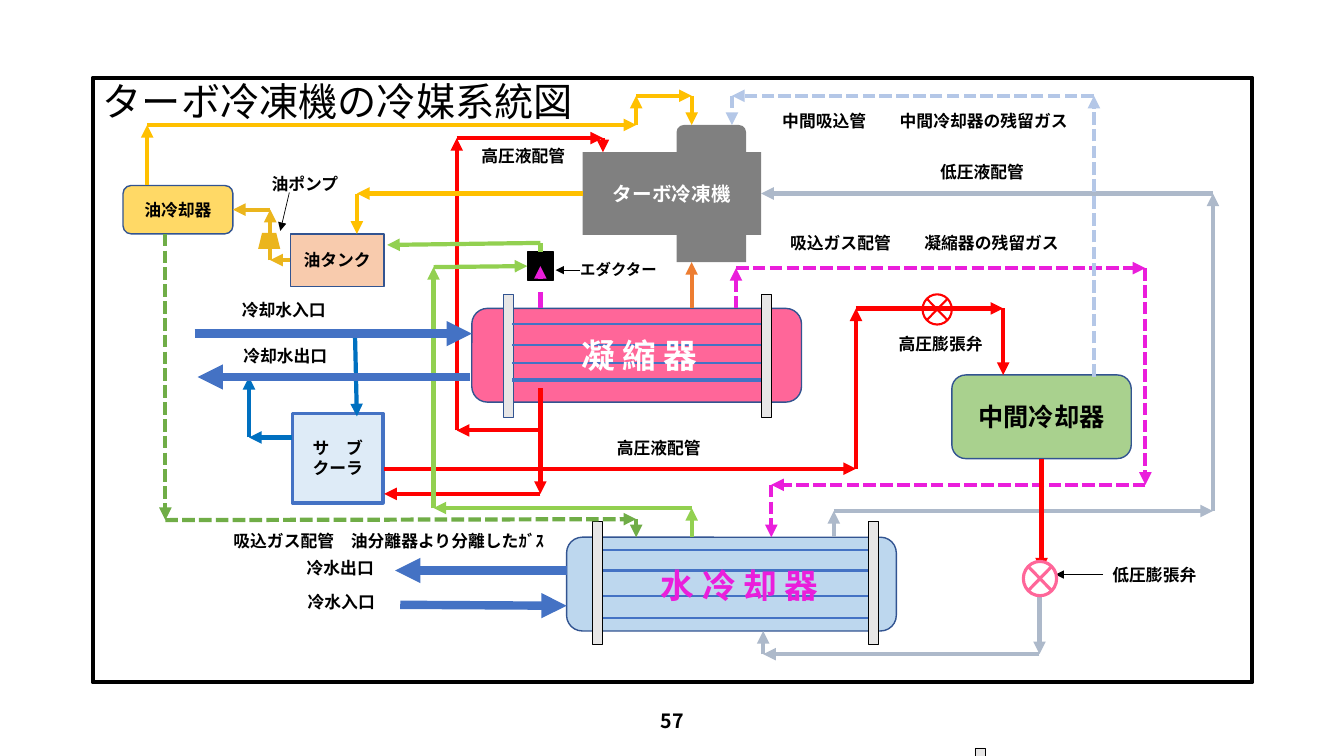
"""Build the refrigerant flow diagram of a turbo chiller on one slide."""
from itertools import pairwise

from lxml import etree
from pptx import Presentation
from pptx.dml.color import RGBColor
from pptx.enum.dml import MSO_LINE
from pptx.enum.shapes import MSO_CONNECTOR, MSO_SHAPE as SHAPE
from pptx.enum.text import MSO_ANCHOR, MSO_AUTO_SIZE, PP_ALIGN
from pptx.oxml.ns import qn
from pptx.util import Inches, Pt


class Theme:
    font = "Noto Sans CJK JP"
    title, vessel, cooler, body, small = 28, 24, 18, 12, 11
    machine = page = 14
    black, white, grey, plate = "000000", "FFFFFF", "808080", "E7E6E6"
    edge, blue, water, pale_blue = "325491", "4472C4", "0070C0", "DEEBF7"
    pink, sky, yellow, peach, sage = "FF6699", "BDD7EE", "FFD966", "F8CBAD", "A9D18E"
    red, magenta, orange, steel, mist = "FF0000", "EA1EDB", "ED7D31", "ADB9CA", "B4C7E7"
    amber, gold, lime, green = "FFC000", "EBB51D", "92D050", "70AD47"


T = Theme


def write(sp, text, size, color=T.black, bold=True):
    tf = sp.text_frame
    tf.text = text
    tf.word_wrap = True
    tf.vertical_anchor = MSO_ANCHOR.MIDDLE
    tf.margin_left = tf.margin_right = 0
    for p in tf.paragraphs:
        p.alignment = PP_ALIGN.CENTER
        for r in p.runs:
            r.font.size, r.font.bold, r.font.name = Pt(size), bold, T.font
            r.font.color.rgb = RGBColor.from_string(color)
            etree.SubElement(r.font._element, qn("a:ea"), typeface=T.font)


def add_box(preset, box, fill=None, line=None, width=1):
    sp = slide.shapes.add_shape(preset, *map(Inches, box))
    sp.shadow.inherit = False
    if fill:
        sp.fill.solid()
        sp.fill.fore_color.rgb = RGBColor.from_string(fill)
    else:
        sp.fill.background()
    if line:
        sp.line.color.rgb = RGBColor.from_string(line)
        sp.line.width = Pt(width)
    else:
        sp.line.fill.background()
    return sp


prs = Presentation()
prs.slide_width, prs.slide_height = Inches(13.33), Inches(7.5)
slide = prs.slides.add_slide(prs.slide_layouts[5])

title = slide.shapes.title
title.left, title.top, title.width, title.height = map(Inches, (0.92, 0.77, 11.5, 6))
title.line.color.rgb = RGBColor.from_string(T.black)
title.line.width = Pt(3)
write(title, "ターボ冷凍機の冷媒系統図", T.title, bold=False)
tf = title.text_frame
tf.auto_size = MSO_AUTO_SIZE.NONE
tf.vertical_anchor = MSO_ANCHOR.TOP
tf.margin_left = Inches(0.1)
tf.paragraphs[0].alignment = PP_ALIGN.LEFT
tf.paragraphs[0].line_spacing = 0.9

machines = [
    (SHAPE.RECTANGLE, (5.78, 1.51, 1.77, 0.82), T.grey, None, 0, "ターボ冷凍機", T.machine, T.white),
    (SHAPE.ROUNDED_RECTANGLE, (6.71, 1.24, 0.69, 0.43), T.grey, None, 0, "", 0, T.black),
    (SHAPE.RECTANGLE, (6.71, 2.21, 0.69, 0.39), T.grey, None, 0, "", 0, T.black),
    (SHAPE.ROUNDED_RECTANGLE, (4.68, 3.06, 3.27, 0.93), T.pink, T.edge, 1, "", 0, T.black),
    (SHAPE.ROUNDED_RECTANGLE, (5.62, 5.33, 3.27, 0.93), T.sky, T.edge, 1, "", 0, T.black),
    (SHAPE.ROUNDED_RECTANGLE, (1.22, 1.84, 1.09, 0.48), T.yellow, T.edge, 1, "油冷却器", T.body, T.black),
    (SHAPE.RECTANGLE, (2.88, 2.32, 0.93, 0.52), T.peach, T.edge, 1, "油タンク", T.body, T.black),
    (SHAPE.ROUNDED_RECTANGLE, (9.44, 3.72, 1.78, 0.83), T.sage, T.edge, 1, "中間冷却器", T.cooler, T.black),
    (SHAPE.RECTANGLE, (2.9, 4.1, 0.9, 0.89), T.pale_blue, T.blue, 2.25, "サ　ブ\nクーラ", T.body, T.black),
    (SHAPE.RECTANGLE, (5.23, 2.5, 0.26, 0.28), T.black, T.black, 1, "", 0, T.black),
]
ports = {}
for preset, box, fill, line, width, text, size, color in machines:
    sp = add_box(preset, box, fill, line, width)
    if text:
        write(sp, text, size, color)
    x, y, w, h = box
    sides = [(x + w / 2, y), (x, y + h / 2), (x + w / 2, y + h), (x + w, y + h / 2)]
    for site, (px, py) in enumerate(sides):
        ports[round(px, 2), round(py, 2)] = sp, site

plates = [(4.99, 2.92, T.edge), (7.55, 2.92, T.black), (8.61, 5.17, T.black),
          (5.88, 5.17, T.black), (9.67, 7.42, T.black)]
for x, y, line in plates:
    add_box(SHAPE.RECTANGLE, (x, y, 0.1, 1.22), T.plate, line, 0.5)

tubes = [(T.blue, 2.25 if y == 3.77 else 1.5, None, False, [(x1, y), (x2, y)])
         for x1, x2, rows in [(5.08, 7.55, (3.21, 3.42, 3.6, 3.77)),
                              (5.98, 8.61, (5.46, 5.66, 5.91, 6.13))]
         for y in rows]
DASH, LONG = MSO_LINE.SQUARE_DOT, MSO_LINE.DASH
pipes = [
    (T.steel, 3, None, True, [(8.27, 5.33), (8.27, 5.07), (12.03, 5.07), (12.03, 1.92), (7.55, 1.92)]),
    (T.orange, 3, None, True, [(6.86, 3.06), (6.86, 2.6)]),
    (T.magenta, 3, DASH, True, [(7.3, 3.06), (7.3, 2.66), (11.36, 2.66), (11.36, 4.81),
                                (7.65, 4.81), (7.65, 5.33)]),
    (T.mist, 3, DASH, True, [(10.85, 3.74), (10.85, 0.95), (7.26, 0.95), (7.26, 1.24)]),
    (T.red, 3, None, True, [(10.33, 4.55), (10.33, 5.66)]),
    (T.steel, 3, None, True, [(10.31, 5.91), (10.31, 6.49), (7.57, 6.49), (7.57, 6.26)]),
    (T.red, 3, None, True, [(5.36, 3.85), (5.36, 4.9), (3.81, 4.9)]),
    (T.red, 3, None, True, [(3.81, 4.65), (8.49, 4.65), (8.49, 3.06), (9.95, 3.06), (9.95, 3.72)]),
    (T.red, 3, None, True, [(5.36, 4.27), (4.53, 4.27), (4.53, 1.37), (5.98, 1.37), (5.98, 1.51)]),
    (T.amber, 3, None, True, [(5.78, 1.92), (3.54, 1.92), (3.54, 2.32)]),
    (T.gold, 3, None, True, [(2.88, 2.58), (2.68, 2.58), (2.68, 2.08), (2.31, 2.08)]),
    (T.amber, 3, None, True, [(1.46, 1.84), (1.46, 1.24), (6.31, 1.24), (6.31, 0.95),
                              (6.86, 0.95), (6.86, 1.24)]),
    (T.lime, 3, None, False, [(5.36, 2.5), (5.36, 2.41)]),
    (T.lime, 3, None, True, [(5.36, 2.41), (3.84, 2.43)]),
    (T.magenta, 3, LONG, True, [(5.36, 3.06), (5.36, 2.64)]),
    (T.lime, 3, None, True, [(6.86, 5.33), (6.86, 5.04), (4.3, 5.04), (4.3, 2.65), (5.23, 2.64)]),
    (T.water, 3, None, True, [(3.52, 3.27), (3.54, 4.13)]),
    (T.water, 3, None, True, [(2.9, 4.34), (2.47, 4.34), (2.47, 3.74)]),
    (T.green, 3, DASH, True, [(1.64, 2.32), (1.64, 5.16), (6.31, 5.15)]),
    (T.green, 3, None, True, [(6.31, 5.15), (6.31, 5.33)]),
    (T.blue, 6, None, True, [(3.97, 6), (5.62, 6.01)]),
    (T.blue, 6, None, True, [(5.62, 5.66), (3.92, 5.66)]),
    (T.blue, 6, None, True, [(1.93, 3.31), (4.68, 3.31)]),
    (T.blue, 6, None, True, [(4.66, 3.74), (1.96, 3.74)]),
    (T.black, 0.5, None, True, [(2.87, 1.91), (2.78, 2.29)]),
    (T.black, 0.5, None, True, [(5.75, 2.68), (5.51, 2.68)]),
    (T.black, 0.5, None, True, [(10.94, 5.7), (10.47, 5.7)]),
]
for color, width, dash, arrow, points in tubes + pipes:
    for start, end in pairwise(points):
        pipe = slide.shapes.add_connector(MSO_CONNECTOR.STRAIGHT, *map(Inches, start + end))
        pipe.line.color.rgb = RGBColor.from_string(color)
        pipe.line.width = Pt(width)
        if dash:
            pipe.line.dash_style = dash
        if arrow:
            etree.SubElement(pipe.line._get_or_add_ln(), qn("a:tailEnd"), type="triangle")
        etree.SubElement(pipe._element.spPr, qn("a:effectLst"))
        if start in ports:
            pipe.begin_connect(*ports[start])
        if end in ports:
            pipe.end_connect(*ports[end])

add_box(SHAPE.FLOWCHART_SUMMING_JUNCTION, (10.15, 5.57, 0.33, 0.34), T.white, T.pink, 2.25)
add_box(SHAPE.FLOWCHART_SUMMING_JUNCTION, (9.15, 2.92, 0.29, 0.3), None, T.red, 1.5)
add_box(SHAPE.TRAPEZOID, (2.56, 2.31, 0.22, 0.16), T.gold)

labels = [
    ("凝 縮 器", (5.36, 3.21, 1.96, 0.63), T.vessel, T.white),
    ("水 冷 却 器", (6.24, 5.5, 2.19, 0.61), T.vessel, T.magenta),
    ("油ポンプ", (2.58, 1.65, 0.89, 0.34), T.body, T.black),
    ("エダクター", (5.62, 2.54, 1.03, 0.27), T.small, T.black),
    ("低圧膨張弁", (10.78, 5.43, 1.34, 0.54), T.body, T.black),
    ("高圧膨張弁", (8.74, 3.25, 1.18, 0.33), T.body, T.black),
    ("中間吸込管　　中間冷却器の残留ガス", (7.64, 1.01, 3.07, 0.38), T.body, T.black),
    ("吸込ガス配管　　凝縮器の残留ガス", (7.65, 2.23, 3.04, 0.36), T.body, T.black),
    ("吸込ガス配管　油分離器より分離したｶﾞｽ", (2.09, 5.24, 3.53, 0.26), T.body, T.black),
    ("冷水出口", (2.86, 5.48, 1.03, 0.3), T.body, T.black),
    ("冷水入口", (2.83, 5.86, 1.11, 0.23), T.body, T.black),
    ("低圧液配管", (8.89, 1.53, 1.7, 0.34), T.body, T.black),
    ("高圧液配管", (5.62, 4.29, 1.83, 0.3), T.body, T.black),
    ("高圧液配管", (4.6, 1.4, 1.18, 0.29), T.body, T.black),
    ("冷却水入口", (1.97, 2.91, 1.69, 0.33), T.body, T.black),
    ("冷却水出口", (2.24, 3.42, 1.18, 0.23), T.body, T.black),
    ("57", (4.42, 6.95, 4.5, 0.4), T.page, T.black),
]
for text, box, size, color in labels:
    write(slide.shapes.add_textbox(*map(Inches, box)), text, size, color)

prs.save("out.pptx")
